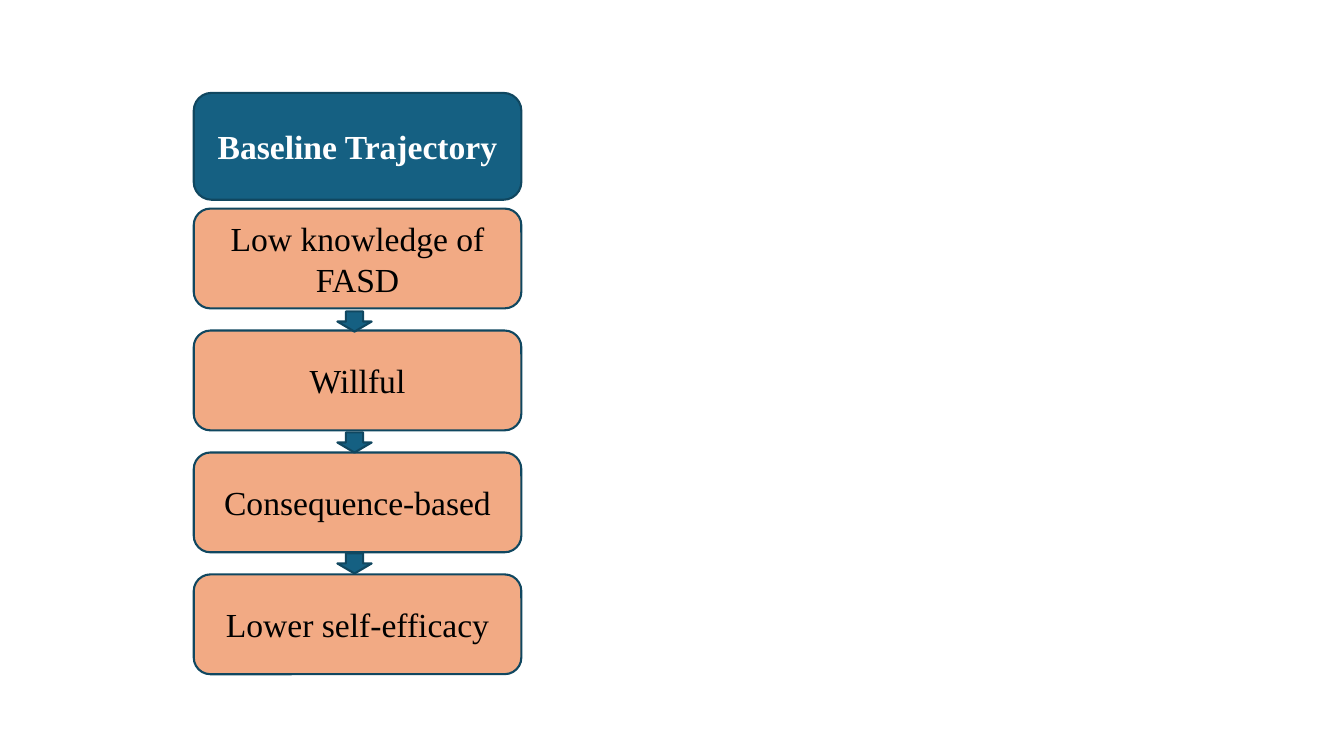
from dataclasses import dataclass

from pptx import Presentation
from pptx.dml.color import RGBColor as Rgb
from pptx.enum.shapes import MSO_SHAPE as Kind
from pptx.enum.text import MSO_ANCHOR as Anchor, PP_ALIGN as Align
from pptx.shapes.autoshape import Shape
from pptx.slide import Slide
from pptx.util import Pt


@dataclass(frozen=True)
class Theme:
    teal: str = "156082"
    peach: str = "F2AA84"
    edge: str = "104760"
    white: str = "FFFFFF"
    black: str = "000000"
    face: str = "Times New Roman"
    size: float = 24
    line: float = 1.5
    after: float = 6


@dataclass(frozen=True)
class Block:
    kind: Kind
    left: float
    top: float
    width: float
    height: float
    fill: str
    text: str = ""
    ink: str = ""
    bold: bool = False


THEME = Theme()
STEPS = ["Low knowledge of FASD", "Willful", "Consequence-based", "Lower self-efficacy"]
LEFT, WIDTH = 138.4, 234
STEP_TOP, STEP_GAP = 149, 87.1
ARROW_TOP, ARROW_GAP = 222.5, 86.4


def apply(target: object, values: dict[str, object]) -> None:
    for name, value in values.items():
        setattr(target, name, value)


def write(shape: Shape, block: Block) -> None:
    frame = shape.text_frame
    apply(frame, {"word_wrap": True, "vertical_anchor": Anchor.MIDDLE})
    para = frame.paragraphs[0]
    apply(para, {"alignment": Align.CENTER, "space_after": Pt(THEME.after)})
    run = para.add_run()
    run.text = block.text
    apply(run.font, {"name": THEME.face, "size": Pt(THEME.size), "bold": block.bold})
    run.font.color.rgb = Rgb.from_string(block.ink)


def draw(slide: Slide, block: Block) -> None:
    box = (block.left, block.top, block.width, block.height)
    shape = slide.shapes.add_shape(block.kind, *map(Pt, box))
    shape.shadow.inherit = False
    shape.fill.solid()
    shape.fill.fore_color.rgb = Rgb.from_string(block.fill)
    shape.line.color.rgb = Rgb.from_string(THEME.edge)
    shape.line.width = Pt(THEME.line)
    if block.text:
        write(shape, block)


def main() -> None:
    deck = Presentation()
    apply(deck, {"slide_width": Pt(960), "slide_height": Pt(540)})
    slide = deck.slides.add_slide(deck.slide_layouts[6])
    head = Block(Kind.ROUNDED_RECTANGLE, LEFT, 66.4, WIDTH, 76.3, THEME.teal,
                 "Baseline Trajectory", THEME.white, True)
    steps = [Block(Kind.ROUNDED_RECTANGLE, LEFT, STEP_TOP + STEP_GAP * i, WIDTH, 71.3,
                   THEME.peach, text, THEME.black) for i, text in enumerate(STEPS)]
    arrows = [Block(Kind.DOWN_ARROW, 241, ARROW_TOP + ARROW_GAP * i, 24.5, 14.4,
                    THEME.teal) for i in range(len(STEPS) - 1)]
    for block in [head, *steps, *arrows]:
        draw(slide, block)
    deck.save("out.pptx")


if __name__ == "__main__":
    main()
